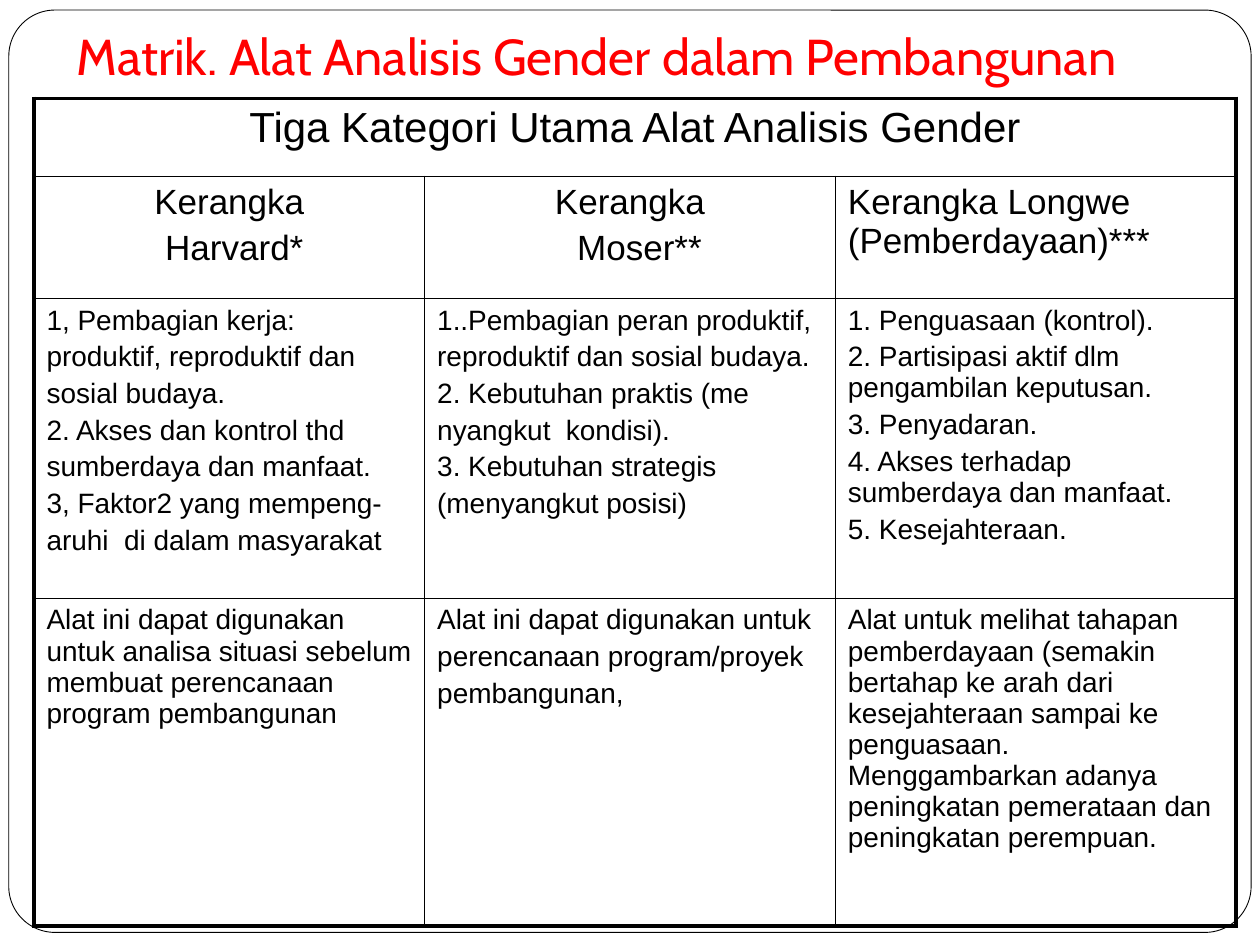
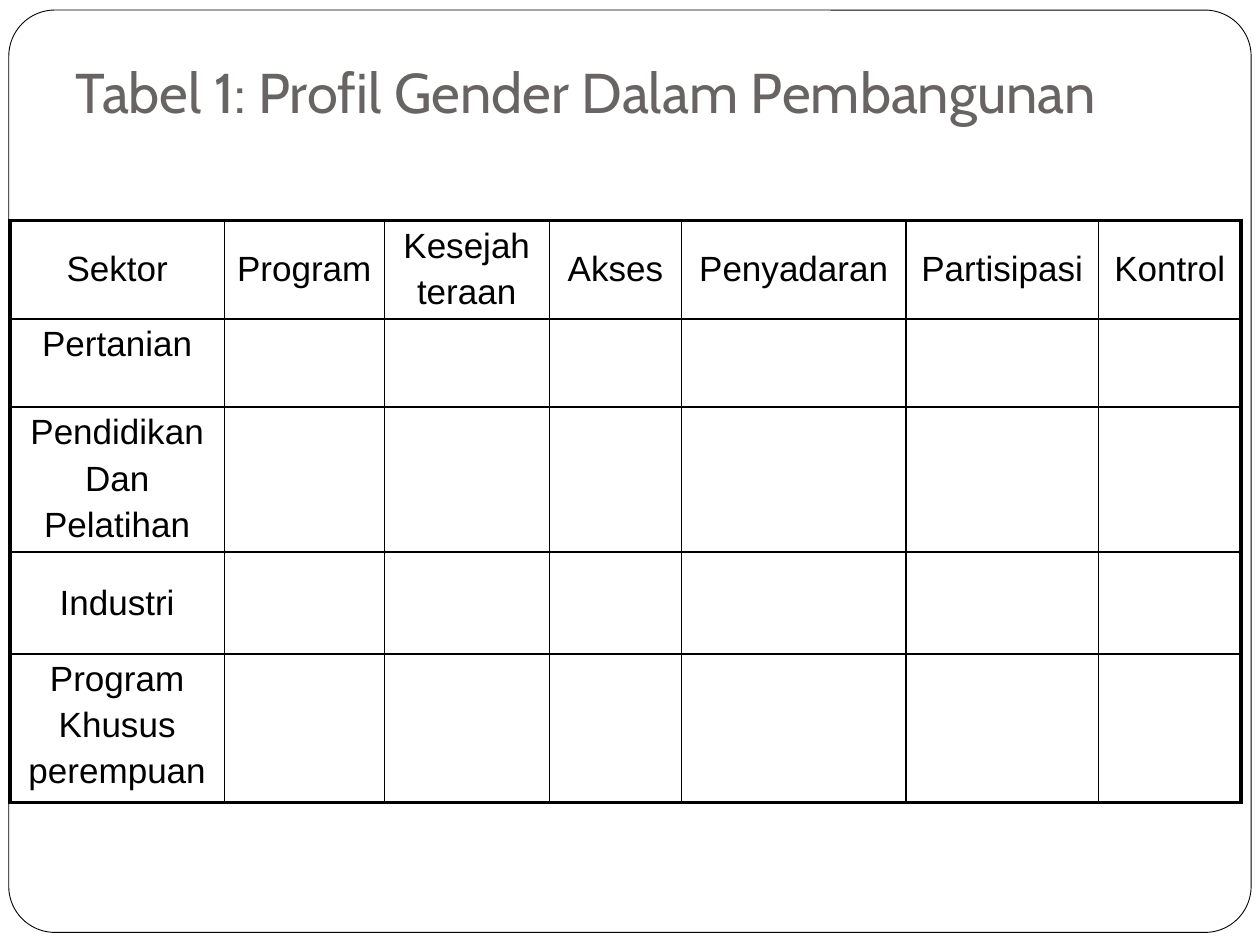
from dataclasses import dataclass

from lxml.etree import SubElement
from pptx import Presentation
from pptx.dml.color import RGBColor
from pptx.enum.shapes import MSO_SHAPE
from pptx.enum.text import MSO_ANCHOR, MSO_AUTO_SIZE, PP_ALIGN
from pptx.oxml.ns import qn
from pptx.presentation import Presentation as Deck
from pptx.slide import Slide
from pptx.table import _Cell
from pptx.text.text import TextFrame
from pptx.util import Inches, Length, Pt

BLACK = RGBColor(0x00, 0x00, 0x00)
WHITE = RGBColor(0xFF, 0xFF, 0xFF)
RED = RGBColor(0xFF, 0x00, 0x00)
GREY = RGBColor(0x69, 0x64, 0x64)
TITLE_FONT = "Cabin"
TABLE_FONT = "Arial"
OUTER_BORDER = Pt(2.25)
INNER_BORDER = Pt(1)
TITLE_ONLY_LAYOUT = 5
NO_INDENT = Inches(0)
HANGING_INDENT = Inches(0.58)


@dataclass(frozen=True)
class Title:
    text: str
    left: float
    top: float
    height: float
    size: float
    color: RGBColor


@dataclass(frozen=True)
class CellText:
    lines: tuple[str, ...]
    size: float = 20
    align: PP_ALIGN = PP_ALIGN.CENTER
    anchor: MSO_ANCHOR = MSO_ANCHOR.TOP
    hanging: Length = NO_INDENT
    last_line_shift: Length = NO_INDENT
    span: int = 1


@dataclass(frozen=True)
class Grid:
    left: float
    top: float
    columns: tuple[float, ...]
    rows: tuple[float, ...]
    cells: dict[tuple[int, int], CellText]


def heading(*lines: str, shift: float = 0) -> CellText:
    return CellText(lines, last_line_shift=Inches(shift))


def middle(*lines: str) -> CellText:
    return CellText(lines, anchor=MSO_ANCHOR.MIDDLE)


def body(*lines: str, hanging: Length = NO_INDENT) -> CellText:
    return CellText(lines, size=16, align=PP_ALIGN.LEFT, hanging=hanging)


MATRIX_TITLE = Title("Matrik. Alat Analisis Gender dalam Pembangunan",
                     0.51, 0.21, 0.57, 28.8, RED)
MATRIX = Grid(
    0.27, 0.78, (3.1, 3.26, 3.18), (0.62, 0.97, 2.38, 2.6),
    {
        (0, 0): CellText(("Tiga Kategori Utama Alat Analisis Gender",), size=24, span=3),
        (1, 0): heading("Kerangka", "Harvard*", shift=0.08),
        (1, 1): heading("Kerangka", "Moser**", shift=0.15),
        (1, 2): CellText(("Kerangka Longwe (Pemberdayaan)***",), align=PP_ALIGN.LEFT),
        (2, 0): body(
            "1, Pembagian kerja:",
            "produktif, reproduktif dan",
            "sosial budaya.",
            "2. Akses dan kontrol thd",
            "sumberdaya dan manfaat.",
            "3, Faktor2 yang mempeng-",
            "aruhi  di dalam masyarakat",
            hanging=HANGING_INDENT),
        (2, 1): body(
            "1..Pembagian peran produktif,",
            "reproduktif dan sosial budaya.",
            "2. Kebutuhan praktis (me",
            "nyangkut  kondisi).",
            "3. Kebutuhan strategis",
            "(menyangkut posisi)",
            hanging=HANGING_INDENT),
        (2, 2): body(
            "1. Penguasaan (kontrol).",
            "2. Partisipasi aktif dlm pengambilan keputusan.",
            "3. Penyadaran.",
            "4. Akses terhadap sumberdaya dan manfaat.",
            "5. Kesejahteraan."),
        (3, 0): body("Alat ini dapat digunakan untuk analisa situasi sebelum "
                     "membuat perencanaan program pembangunan"),
        (3, 1): body("Alat ini dapat digunakan untuk",
                     "perencanaan program/proyek",
                     "pembangunan,"),
        (3, 2): body("Alat untuk melihat tahapan pemberdayaan (semakin bertahap "
                     "ke arah dari kesejahteraan sampai ke penguasaan. "
                     "Menggambarkan adanya peningkatan pemerataan dan "
                     "peningkatan perempuan."),
    })

PROFILE_TITLE = Title("Tabel 1: Profil Gender Dalam Pembangunan",
                      0.5, 0.3, 0.79, 32, GREY)
PROFILE_HEADER = (
    middle("Sektor"), middle("Program"), middle("Kesejah", "teraan"), middle("Akses"),
    middle("Penyadaran"), middle("Partisipasi"), middle("Kontrol"))
SECTORS = (
    heading("Pertanian"),
    heading("Pendidikan", "Dan", "Pelatihan"),
    middle("Industri"),
    heading("Program", "Khusus", "perempuan"))
PROFILE = Grid(
    0.08, 1.75, (1.7, 1.27, 1.31, 1.05, 1.78, 1.53, 1.13), (0.78, 0.7, 1.15, 0.81, 1.18),
    {(0, column): text for column, text in enumerate(PROFILE_HEADER)}
    | {(row, 0): text for row, text in enumerate(SECTORS, start=1)})


def write_text(frame: TextFrame, lines: tuple[str, ...], *, font: str, size: float,
               color: RGBColor = BLACK, align: PP_ALIGN = PP_ALIGN.LEFT,
               hanging: Length = NO_INDENT, last_line_shift: Length = NO_INDENT,
               space_before: int = 0) -> None:
    """Write one paragraph per line; space_before is a percentage of the line."""
    for index, line in enumerate(lines):
        paragraph = frame.paragraphs[0] if index == 0 else frame.add_paragraph()
        paragraph.alignment = align
        properties = paragraph._p.get_or_add_pPr()
        left_indent = last_line_shift if index == len(lines) - 1 else NO_INDENT
        properties.set("marL", str(int(hanging + left_indent)))
        properties.set("indent", str(-int(hanging)))
        spacing = SubElement(properties, qn("a:spcBef"))
        SubElement(spacing, qn("a:spcPct"), val=str(space_before * 1000))
        run = paragraph.add_run()
        run.text = line
        run.font.name = font
        run.font.size = Pt(size)
        run.font.color.rgb = color


def set_border(cell: _Cell, side: str, width: Length) -> None:
    line = SubElement(cell._tc.get_or_add_tcPr(), qn(f"a:ln{side}"), w=str(int(width)))
    fill = SubElement(line, qn("a:solidFill"))
    SubElement(fill, qn("a:srgbClr"), val=str(BLACK))


def add_title(slide: Slide, title: Title) -> None:
    shape = slide.shapes.title
    shape.left, shape.top = Inches(title.left), Inches(title.top)
    shape.width, shape.height = Inches(9), Inches(title.height)
    frame = shape.text_frame
    frame.auto_size = MSO_AUTO_SIZE.NONE
    frame.word_wrap = True
    frame.vertical_anchor = MSO_ANCHOR.BOTTOM
    frame.margin_left = frame.margin_right = frame.margin_bottom = Inches(0.1)
    frame.margin_top = Inches(0.05)
    write_text(frame, (title.text,), font=TITLE_FONT, size=title.size, color=title.color)


def add_grid(slide: Slide, grid: Grid) -> None:
    row_count, column_count = len(grid.rows), len(grid.columns)
    table = slide.shapes.add_table(
        row_count, column_count, Inches(grid.left), Inches(grid.top),
        Inches(sum(grid.columns)), Inches(sum(grid.rows))).table
    table.first_row = table.horz_banding = False
    for column, width in zip(table.columns, grid.columns):
        column.width = Inches(width)
    for row, height in zip(table.rows, grid.rows):
        row.height = Inches(height)

    for row in range(row_count):
        for column in range(column_count):
            cell = table.cell(row, column)
            text = grid.cells.get((row, column))
            span = text.span if text else 1
            on_edge = {
                "L": column == 0,
                "R": column + span == column_count,
                "T": row == 0,
                "B": row == row_count - 1,
            }
            for side, is_outer in on_edge.items():
                set_border(cell, side, OUTER_BORDER if is_outer else INNER_BORDER)
            cell.fill.background()
            if text is None:
                continue
            if span > 1:
                cell.merge(table.cell(row, column + span - 1))
            cell.vertical_anchor = text.anchor
            write_text(cell.text_frame, text.lines, font=TABLE_FONT, size=text.size,
                       align=text.align, hanging=text.hanging,
                       last_line_shift=text.last_line_shift, space_before=20)


def add_layout_frame(presentation: Deck, slide: Slide) -> None:
    """Draw the rounded frame and move it to the layout that all slides share."""
    frame = slide.shapes.add_shape(MSO_SHAPE.ROUNDED_RECTANGLE, Inches(0.07), Inches(0.08),
                                   Inches(9.86), Inches(7.32))
    frame.adjustments[0] = 0.05
    frame.shadow.inherit = False
    frame.fill.solid()
    frame.fill.fore_color.rgb = WHITE
    frame.line.color.rgb = BLACK
    frame.line.width = Pt(0.5)
    presentation.slide_layouts[TITLE_ONLY_LAYOUT].shapes.element.insert(2, frame.element)


def main() -> None:
    presentation = Presentation()
    presentation.slide_width = Inches(10)
    presentation.slide_height = Inches(7.5)
    layout = presentation.slide_layouts[TITLE_ONLY_LAYOUT]
    for title, grid in ((MATRIX_TITLE, MATRIX), (PROFILE_TITLE, PROFILE)):
        slide = presentation.slides.add_slide(layout)
        add_title(slide, title)
        add_grid(slide, grid)
    add_layout_frame(presentation, presentation.slides[0])
    presentation.save("out.pptx")


if __name__ == "__main__":
    main()
